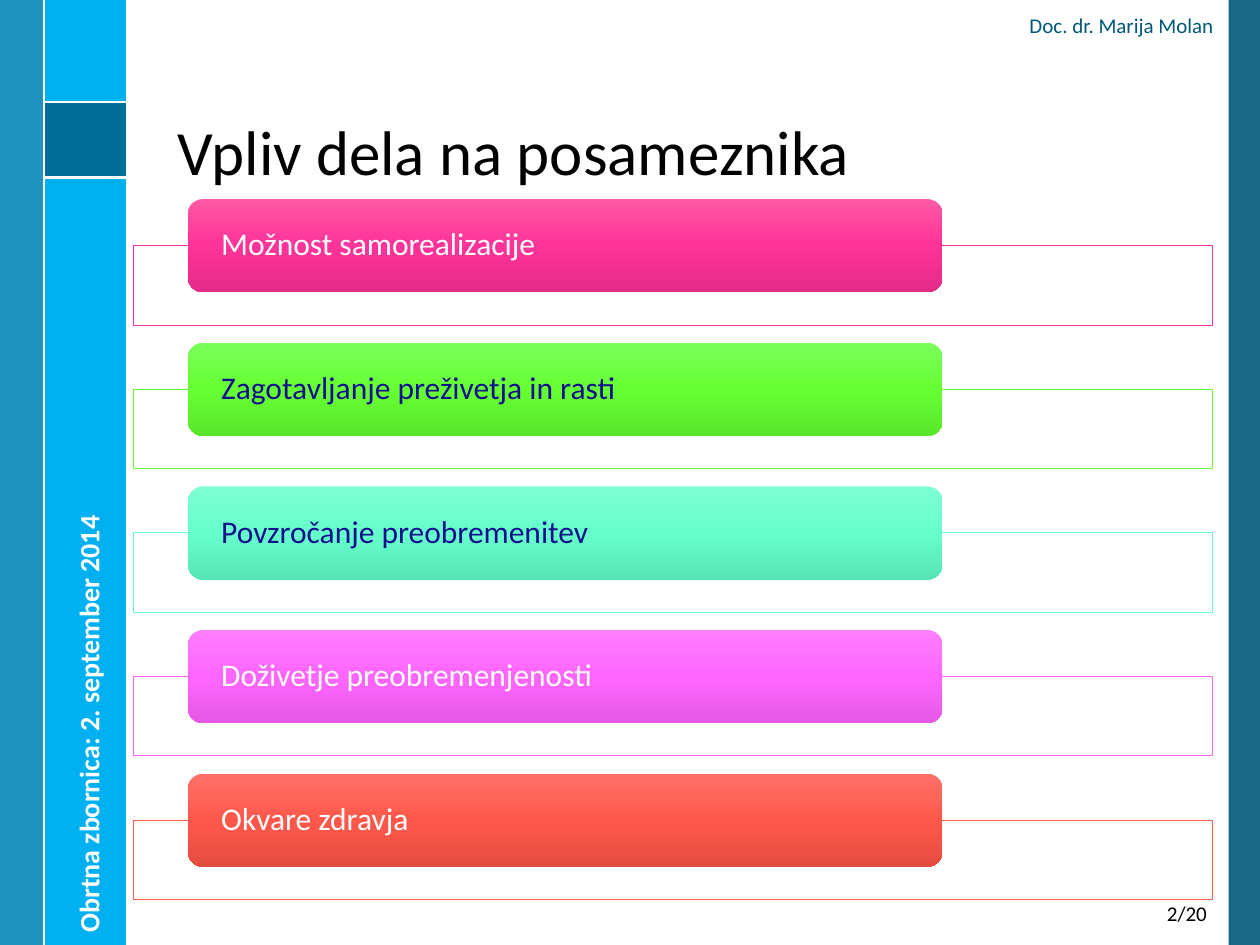
from copy import deepcopy
from lxml import etree
from pptx import Presentation
from pptx.dml.color import RGBColor as RGB
from pptx.enum.shapes import MSO_CONNECTOR as Conn, MSO_SHAPE as Geo
from pptx.enum.text import MSO_ANCHOR as Anchor, PP_ALIGN as Align
from pptx.oxml.ns import qn
from pptx.util import Inches, Pt

FONT = "Calibri"
WHITE = RGB(255, 255, 255)
BLACK = RGB(0, 0, 0)
NAVY = RGB(0x10, 0x10, 0x8C)
SKY = RGB(0x00, 0xB0, 0xF0)
BLUE = RGB(0x00, 0x84, 0xB4)
TEAL = RGB(0x00, 0x58, 0x78)

# Text, text colour, then gradient from top to bottom
ITEMS = [
    ("Možnost samorealizacije", WHITE,
     (RGB(0xFF, 0x5A, 0xA4), RGB(0xFF, 0x33, 0x99), RGB(0xE5, 0x2B, 0x88))),
    ("Zagotavljanje preživetja in rasti", NAVY,
     (RGB(0x7B, 0xFF, 0x5A), RGB(0x66, 0xFF, 0x33), RGB(0x59, 0xE5, 0x2B))),
    ("Povzročanje preobremenitev", NAVY,
     (RGB(0x7D, 0xFF, 0xD2), RGB(0x66, 0xFF, 0xCC), RGB(0x58, 0xE5, 0xB6))),
    ("Doživetje preobremenjenosti", WHITE,
     (RGB(0xFF, 0x7D, 0xFF), RGB(0xFF, 0x66, 0xFF), RGB(0xE5, 0x58, 0xE5))),
    ("Okvare zdravja", WHITE,
     (RGB(0xFF, 0x71, 0x68), RGB(0xFF, 0x58, 0x4B), RGB(0xE5, 0x4C, 0x40))),
]


def add_box(slide, box, geo=Geo.RECTANGLE):
    shape = slide.shapes.add_shape(geo, *map(Inches, box))
    shape.shadow.inherit = False
    shape.line.fill.background()
    return shape


def paint(shape, color, alpha=100):
    shape.fill.solid()
    shape.fill.fore_color.rgb = color
    if alpha < 100:
        node = shape.fill._xPr.find(".//" + qn("a:srgbClr"))
        etree.SubElement(node, qn("a:alpha"), val=str(alpha * 1000))


def shade(shape, colors):
    fill = shape.fill
    fill.gradient()
    fill.gradient_angle = 270
    first = fill._xPr.find(".//" + qn("a:gs"))
    first.addnext(deepcopy(first))
    for stop, color, pos in zip(fill.gradient_stops, colors, (0, 0.5, 1)):
        stop.color.rgb = color
        stop.position = pos


def write(shape, text, size, color, align=Align.LEFT, anchor=Anchor.MIDDLE,
          bold=False, space=None):
    frame = shape.text_frame
    frame.word_wrap = True
    frame.vertical_anchor = anchor
    para = frame.paragraphs[0]
    para.alignment = align
    para.line_spacing = space
    run = para.add_run()
    run.text = text
    font = run.font
    font.name, font.size, font.bold = FONT, Pt(size), bold
    font.color.rgb = color


def add_text(slide, box, text, size, color, **style):
    shape = slide.shapes.add_textbox(*map(Inches, box))
    write(shape, text, size, color, **style)
    return shape


def add_rule(slide, x1, y1, x2, y2):
    rule = slide.shapes.add_connector(
        Conn.STRAIGHT, *map(Inches, (x1, y1, x2, y2)))
    rule.line.color.rgb = WHITE
    rule.line.width = Pt(1.5)
    etree.SubElement(rule._element.spPr, qn("a:effectLst"))


def add_side(slide, x, y, w, h):
    """Left band: outer strip, inner strip, dark tile and vertical label."""
    edge = x + 0.35
    wide = w - 0.35
    top, tall = y + 0.81, 0.6
    paint(add_box(slide, (edge, y, wide, h)), SKY)
    paint(add_box(slide, (x, y, 0.35, h)), BLUE, 88)
    paint(add_box(slide, (edge, top, wide, tall)), TEAL, 75)
    for row in (top, top + tall):
        add_rule(slide, edge, row, x + w, row)
    add_rule(slide, edge, y, edge, y + h)
    # Label turned to read upwards
    long, thick = 4.38, 0.4
    mid_x, mid_y = x + 0.7, y + h - long / 2
    label = add_text(slide, (mid_x - long / 2, mid_y - thick / 2, long, thick),
                     "Obrtna zbornica: 2. september 2014", 16, WHITE, bold=True)
    label.rotation = 270


def add_list(slide, x, y, w, step):
    """Coloured headings, each overlapping an outlined frame."""
    for i, (text, ink, colors) in enumerate(ITEMS):
        top = y + i * step
        frame = add_box(slide, (x, top + 0.37, w, 0.63))
        paint(frame, WHITE, 90)
        frame.line.color.rgb = colors[1]
        frame.line.width = Pt(0.5)
        head = add_box(slide, (x + 0.43, top, w * 0.7, 0.74),
                       Geo.ROUNDED_RECTANGLE)
        shade(head, colors)
        write(head, text, 18, ink, space=0.9)
        area = head.text_frame
        area.margin_left = area.margin_right = Inches(0.23)
        area.margin_top = area.margin_bottom = 0


def main():
    deck = Presentation()
    deck.slide_width, deck.slide_height = Inches(10), Inches(7.5)
    slide = deck.slides.add_slide(deck.slide_layouts[6])

    # Side bands
    paint(add_box(slide, (9.75, 0, 0.25, 7.5)), TEAL, 90)
    add_side(slide, 0, 0, 1, 7.5)

    # Title and list
    add_text(slide, (1.31, 0.19, 8.03, 1.36), "Vpliv dela na posameznika",
             36, BLACK, anchor=Anchor.BOTTOM, space=0.9)
    add_list(slide, 1.06, 1.58, 8.56, 1.14)

    # Author and page number
    add_text(slide, (3.98, 0, 5.75, 0.4), "Doc. dr. Marija Molan",
             12, TEAL, align=Align.RIGHT)
    add_text(slide, (9.09, 7.1, 0.66, 0.4), "2/20",
             12, BLACK, align=Align.CENTER, anchor=Anchor.TOP)

    deck.save("out.pptx")


if __name__ == "__main__":
    main()
